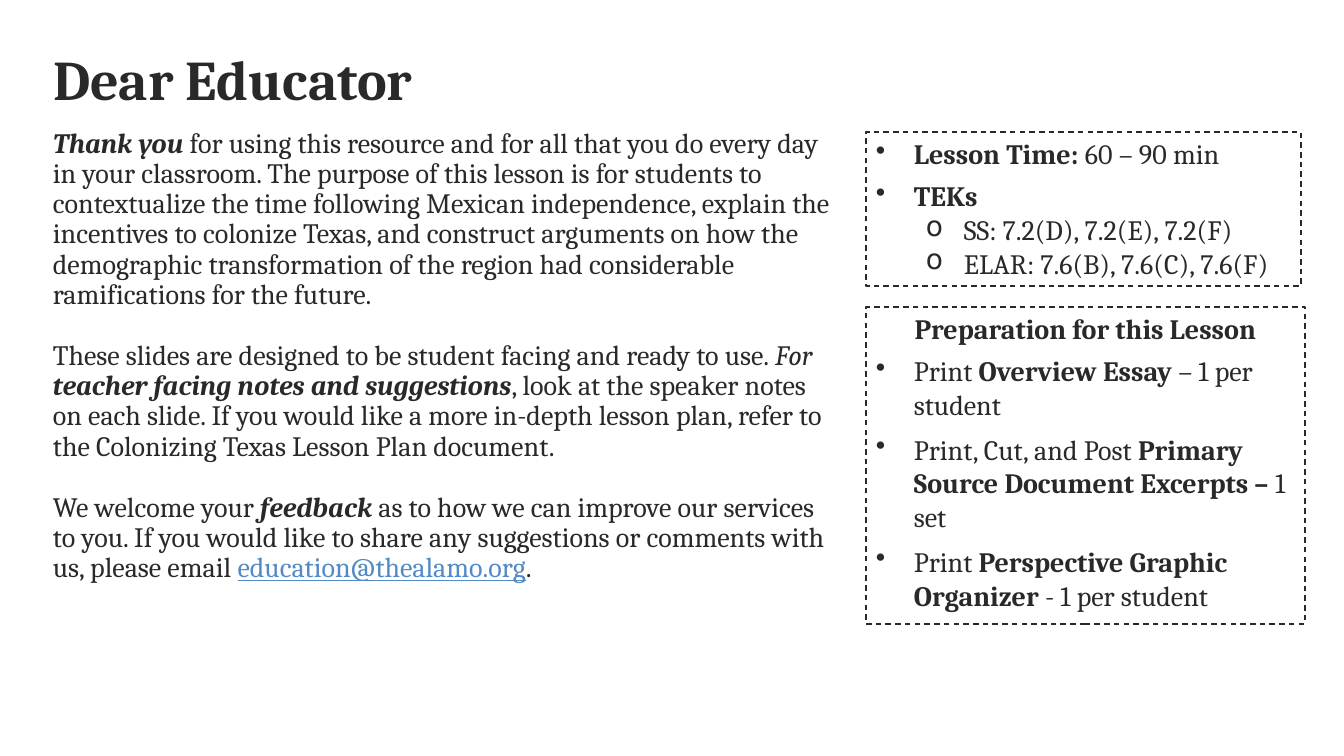
"""Build the "Dear Educator" lesson introduction slide."""
import lxml.etree
import pptx
import pptx.dml.color
import pptx.enum.dml
import pptx.enum.shapes
import pptx.enum.text
import pptx.oxml.ns
import pptx.util

INK = pptx.dml.color.RGBColor(0x29, 0x29, 0x29)
EMAIL_BLUE = pptx.dml.color.RGBColor(0x52, 0x8A, 0xC7)
FONT = "Cambria"
ALIGN = pptx.enum.text.PP_ALIGN
INDENTS = {"•": 38, "o": 88}
HANGING = 38


def px(value):
    return pptx.util.Emu(round(value * 914400 / 100.8))


def write(paragraph, runs, size=20):
    for text, style in runs:
        run = paragraph.add_run()
        run.text = text
        run.font.name = FONT
        run.font.size = pptx.util.Pt(size)
        run.font.bold = "b" in style
        run.font.italic = "i" in style
        run.font.underline = "u" in style
        run.font.color.rgb = EMAIL_BLUE if "u" in style else INK


presentation = pptx.Presentation()
presentation.slide_width = px(1344)
presentation.slide_height = px(756)
slide = presentation.slides.add_slide(presentation.slide_layouts[5])

heading = slide.shapes.title
heading.left, heading.top, heading.width, heading.height = px(43), px(42), px(1257), px(80)
heading.text_frame.word_wrap = True
heading.text_frame.auto_size = pptx.enum.text.MSO_AUTO_SIZE.NONE
heading.text_frame.vertical_anchor = pptx.enum.text.MSO_ANCHOR.MIDDLE
heading_line = heading.text_frame.paragraphs[0]
heading_line.alignment = ALIGN.LEFT
heading_line.line_spacing = 0.9
write(heading_line, [("Dear Educator", "b")], 40)

letter_paragraphs = [
    [("Thank you", "bi"),
     (" for using this resource and for all that you do every day in your classroom. "
      "The purpose of this lesson is for students to contextualize the time following "
      "Mexican independence, explain the incentives to colonize Texas, and construct "
      "arguments on how the demographic transformation of the region had considerable "
      "ramifications for the future. ", "")],
    [("These slides are designed to be student facing and ready to use. ", ""),
     ("For ", "i"),
     ("teacher facing notes and suggestions", "bi"),
     (", look at the speaker notes on each slide. If you would like a more in-depth "
      "lesson plan, refer to the Colonizing Texas Lesson Plan document.", "")],
    [("We welcome your ", ""),
     ("feedback ", "bi"),
     ("as to how we can improve our services to you. If you would like to share any "
      "suggestions or comments with us, please email ", ""),
     ("education@thealamo.org", "u"),
     (".", "")],
]
letter = slide.shapes.add_textbox(px(43), px(124), px(799), px(490)).text_frame
letter.word_wrap = True
for index, runs in enumerate(letter_paragraphs):
    paragraph = letter.add_paragraph() if index else letter.paragraphs[0]
    paragraph.line_spacing = 0.9
    paragraph.space_before = pptx.util.Pt(10 if index else 0)
    paragraph.space_after = pptx.util.Pt(12)
    write(paragraph, runs)

preparation = [
    ("", 6, [("Preparation for this Lesson", "b")]),
    ("•", 8, [("Print ", ""), ("Overview Essay", "b"), (" – 1 per student", "")]),
    ("•", 8, [("Print, Cut, and Post ", ""),
              ("Primary Source Document Excerpts – ", "b"), ("1 set", "")]),
    ("•", 8, [("Print ", ""), ("Perspective Graphic Organizer", "b"),
              (" - 1 per student", "")]),
]
lesson_facts = [
    ("•", 6, [("Lesson Time:", "b"), (" 60 – 90 min", "")]),
    ("•", 0, [("TEKs", "b")]),
    ("o", 0, [("SS: 7.2(D), 7.2(E), 7.2(F)", "")]),
    ("o", 0, [("ELAR: 7.6(B), 7.6(C), 7.6(F)", "")]),
]
for top, width, height, lines in [(307, 439, 317, preparation), (132, 435, 154, lesson_facts)]:
    panel = slide.shapes.add_shape(
        pptx.enum.shapes.MSO_SHAPE.RECTANGLE, px(866), px(top), px(width), px(height))
    panel.shadow.inherit = False
    panel.fill.background()
    panel.line.color.rgb = INK
    panel.line.width = pptx.util.Pt(1)
    panel.line.dash_style = pptx.enum.dml.MSO_LINE.DASH
    panel_text = panel.text_frame
    panel_text.word_wrap = True
    panel_text.auto_size = pptx.enum.text.MSO_AUTO_SIZE.SHAPE_TO_FIT_TEXT
    panel_text.vertical_anchor = pptx.enum.text.MSO_ANCHOR.TOP
    for index, (bullet, gap, runs) in enumerate(lines):
        paragraph = panel_text.add_paragraph() if index else panel_text.paragraphs[0]
        paragraph.alignment = ALIGN.LEFT if bullet else ALIGN.CENTER
        if bullet:
            paragraph.level = 1 if bullet == "o" else 0
            properties = paragraph._p.get_or_add_pPr()
            properties.set("marL", str(px(INDENTS[bullet])))
            properties.set("indent", str(-px(HANGING)))
            lxml.etree.SubElement(properties, pptx.oxml.ns.qn("a:buChar"), char=bullet)
        paragraph.space_after = pptx.util.Pt(gap)
        write(paragraph, runs)

presentation.save("out.pptx")
